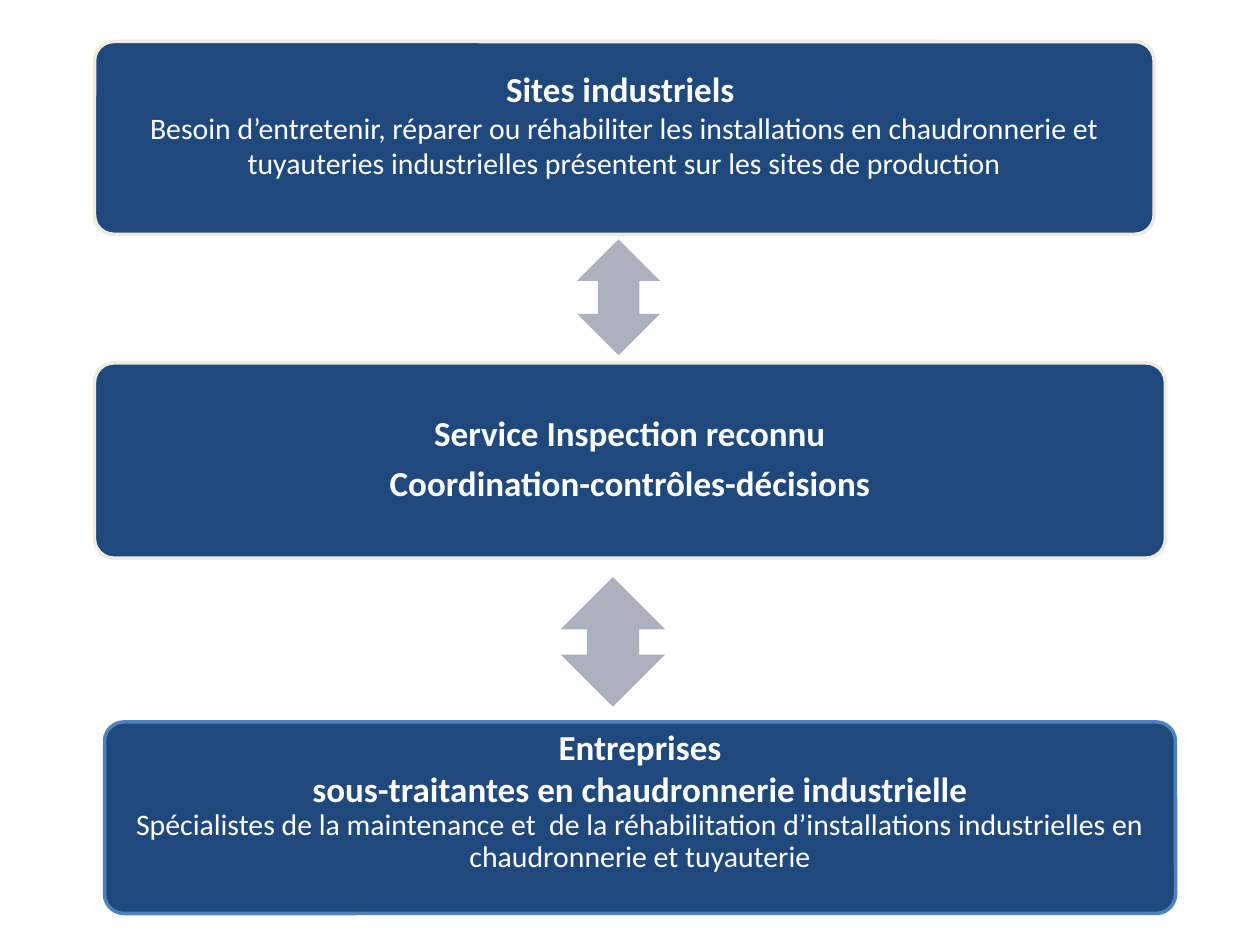
from dataclasses import dataclass

from pptx import Presentation
from pptx.dml.color import RGBColor
from pptx.enum import shapes, text
from pptx.util import Inches, Pt


@dataclass(frozen=True)
class Theme:
    font: str = "Calibri"
    heading: int = 20
    detail: int = 17
    navy: str = "1F497D"
    cream: str = "EEECE1"
    blue: str = "4F81BD"
    grey: str = "ACB1BF"
    white: str = "FFFFFF"


theme = Theme()
PADDING = 0.08


def add_filled(page, kind, place, color):
    shape = page.shapes.add_shape(kind, *(Inches(value) for value in place))
    shape.shadow.inherit = False
    shape.fill.solid()
    shape.fill.fore_color.rgb = RGBColor.from_string(color)
    return shape


deck = Presentation()
deck.slide_width, deck.slide_height = Inches(10), Inches(7.5)
page = deck.slides.add_slide(deck.slide_layouts[6])

# Place, outline, extra room under the text, and paragraphs as
# (words, is heading, line spacing, points after)
actors = [
    ((0.75, 0.33, 8.41, 1.53), theme.cream, 0.22, [
        ("Sites industriels ", True, 1.0, 0),
        ("Besoin d’entretenir, réparer ou réhabiliter les installations en "
         "chaudronnerie et tuyauteries industrielles présentent sur les sites "
         "de production", False, 1.0, 0),
    ]),
    ((0.75, 2.88, 8.5, 1.55), theme.cream, 0, [
        ("Service Inspection reconnu", True, 0.9, 7),
        ("Coordination-contrôles-décisions", True, 0.9, 0),
    ]),
    ((0.83, 5.73, 8.5, 1.52), theme.blue, 0.29, [
        ("Entreprises", True, 1.0, 0),
        ("sous-traitantes en chaudronnerie industrielle", True, 1.0, 0),
        ("Spécialistes de la maintenance et  de la réhabilitation "
         "d’installations industrielles en chaudronnerie et tuyauterie",
         False, 0.9, 0),
    ]),
]

for place, outline, room_below, paragraphs in actors:
    box = add_filled(page, shapes.MSO_SHAPE.ROUNDED_RECTANGLE, place, theme.navy)
    box.adjustments[0] = 0.1
    box.line.color.rgb = RGBColor.from_string(outline)
    box.line.width = Pt(2)
    frame = box.text_frame
    frame.word_wrap = True
    frame.vertical_anchor = text.MSO_ANCHOR.MIDDLE
    frame.margin_left = frame.margin_right = frame.margin_top = Inches(PADDING)
    frame.margin_bottom = Inches(PADDING + room_below)
    for index, (words, is_heading, spacing, after) in enumerate(paragraphs):
        para = frame.add_paragraph() if index else frame.paragraphs[0]
        para.alignment = text.PP_ALIGN.CENTER
        para.line_spacing = spacing
        para.space_after = Pt(after)
        span = para.add_run()
        span.text = words
        span.font.name = theme.font
        span.font.size = Pt(theme.heading if is_heading else theme.detail)
        span.font.bold = is_heading
        span.font.color.rgb = RGBColor.from_string(theme.white)

for place in [(4.58, 1.9, 0.66, 0.92), (4.45, 4.58, 0.83, 1.03)]:
    arrow = add_filled(page, shapes.MSO_SHAPE.UP_DOWN_ARROW, place, theme.grey)
    arrow.adjustments[0] = arrow.adjustments[1] = 0.5
    arrow.line.fill.background()

deck.save("out.pptx")
